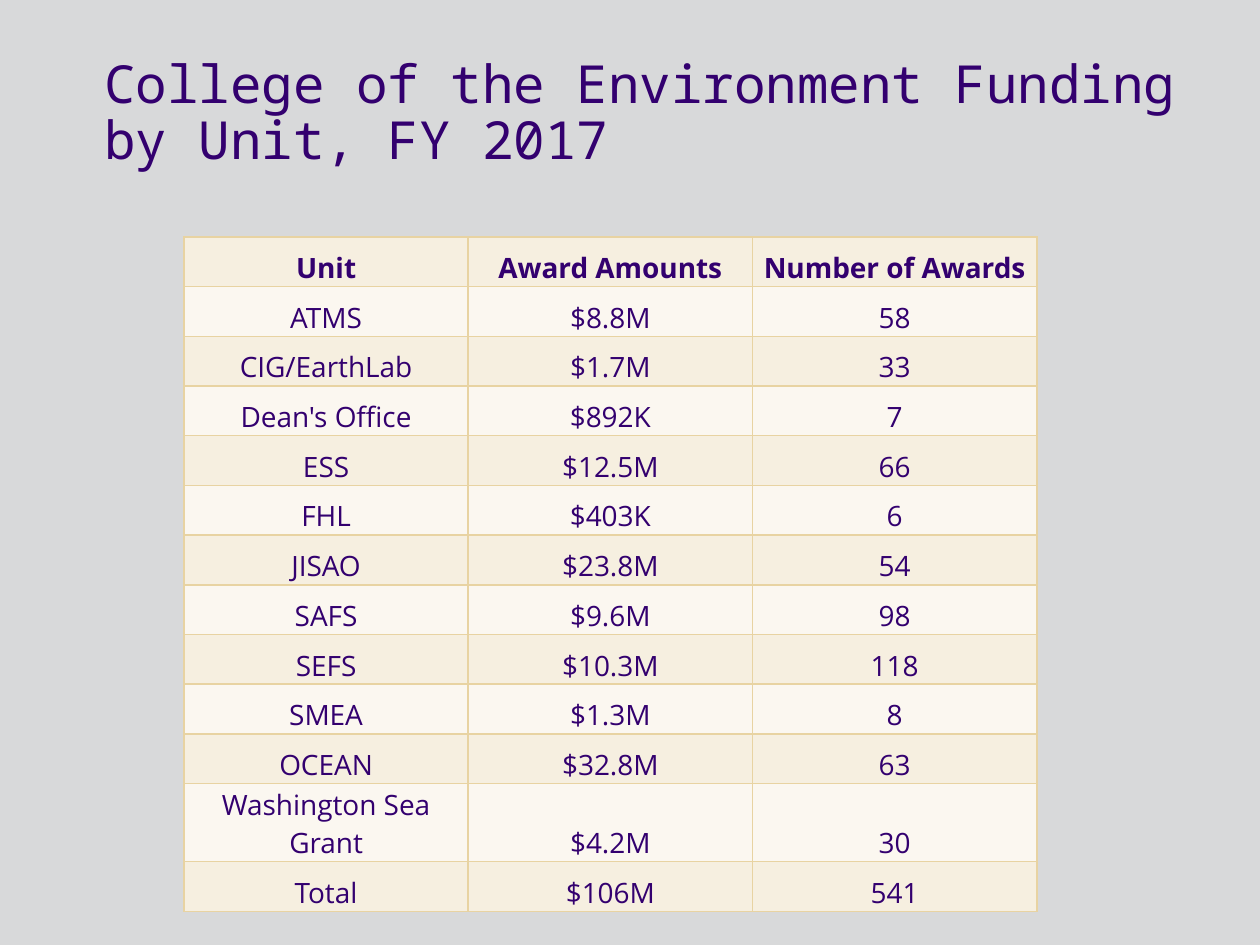
from typing import NamedTuple

from lxml.etree import SubElement
from pptx import Presentation
from pptx.dml.color import RGBColor
from pptx.enum.text import MSO_ANCHOR, PP_ALIGN
from pptx.oxml.ns import qn
from pptx.util import Inches, Pt

PURPLE = RGBColor(0x33, 0x00, 0x6F)
GREY = RGBColor(0xD8, 0xD9, 0xDA)
GOLD = RGBColor(0xE8, 0xD3, 0xA2)
CREAM = RGBColor(0xF6, 0xEF, 0xE0)
IVORY = RGBColor(0xFB, 0xF7, 0xF0)

TITLE_FONT = "Noto Sans Mono"
TABLE_FONT = "Open Sans"
TWO_LINE_HEIGHT = Inches(0.62)


class Funding(NamedTuple):
    unit: str
    amount: str
    awards: str
    two_lines: bool = False


ROWS = [
    Funding("Unit", "Award Amounts", "Number of Awards"),
    Funding("ATMS", "$8.8M", "58"),
    Funding("CIG/EarthLab", "$1.7M", "33"),
    Funding("Dean's Office", "$892K", "7"),
    Funding("ESS", "$12.5M", "66"),
    Funding("FHL", "$403K", "6"),
    Funding("JISAO", "$23.8M", "54"),
    Funding("SAFS", "$9.6M", "98"),
    Funding("SEFS", "$10.3M", "118"),
    Funding("SMEA", "$1.3M", "8"),
    Funding("OCEAN", "$32.8M", "63"),
    Funding("Washington Sea Grant", "$4.2M", "30", two_lines=True),
    Funding("Total", "$106M", "541"),
]


def style_text(paragraph, font_name: str, size: int, bold: bool = False) -> None:
    font = paragraph.font
    font.name = font_name
    font.size = Pt(size)
    font.bold = bold
    font.color.rgb = PURPLE


def add_title(slide, text: str) -> None:
    box = slide.shapes.add_textbox(Inches(0.73), Inches(0.41), Inches(8.95), Inches(1.08))
    box.text_frame.word_wrap = True
    paragraph = box.text_frame.paragraphs[0]
    paragraph.text = text
    paragraph.line_spacing = 0.9
    style_text(paragraph, TITLE_FONT, 30)


def add_borders(cell, color: RGBColor, width: int) -> None:
    properties = cell._tc.get_or_add_tcPr()
    for index, side in enumerate(("a:lnL", "a:lnR", "a:lnT", "a:lnB")):
        line = SubElement(properties, qn(side), w=str(width))
        fill = SubElement(line, qn("a:solidFill"))
        SubElement(fill, qn("a:srgbClr"), val=str(color))
        # Borders come before the fill in the cell properties
        properties.insert(index, line)


def fill_cell(cell, text: str, fill: RGBColor, bold: bool) -> None:
    cell.fill.solid()
    cell.fill.fore_color.rgb = fill
    cell.vertical_anchor = MSO_ANCHOR.BOTTOM
    cell.margin_left = cell.margin_right = cell.margin_top = Inches(0.01)
    cell.margin_bottom = 0
    paragraph = cell.text_frame.paragraphs[0]
    paragraph.text = text
    paragraph.alignment = PP_ALIGN.CENTER
    style_text(paragraph, TABLE_FONT, 16, bold)
    add_borders(cell, GOLD, Pt(1))


def add_funding_table(slide, rows: list[Funding]) -> None:
    frame = slide.shapes.add_table(
        len(rows), 3, Inches(1.46), Inches(1.88), Inches(6.77), Inches(5.13)
    )
    table = frame.table
    for row_index, row in enumerate(rows):
        fill = IVORY if row_index % 2 else CREAM
        for column_index, text in enumerate((row.unit, row.amount, row.awards)):
            cell = table.cell(row_index, column_index)
            fill_cell(cell, text, fill, bold=row_index == 0)
        if row.two_lines:
            table.rows[row_index].height = TWO_LINE_HEIGHT
    frame.height = sum(table_row.height for table_row in table.rows)


def main() -> None:
    presentation = Presentation()
    presentation.slide_width = Inches(10)
    presentation.slide_height = Inches(7.5)
    slide = presentation.slides.add_slide(presentation.slide_layouts[6])

    # Background
    slide.background.fill.solid()
    slide.background.fill.fore_color.rgb = GREY

    # Title and table
    add_title(slide, "College of the Environment Funding by Unit, FY 2017")
    add_funding_table(slide, ROWS)

    presentation.save("out.pptx")


if __name__ == "__main__":
    main()
